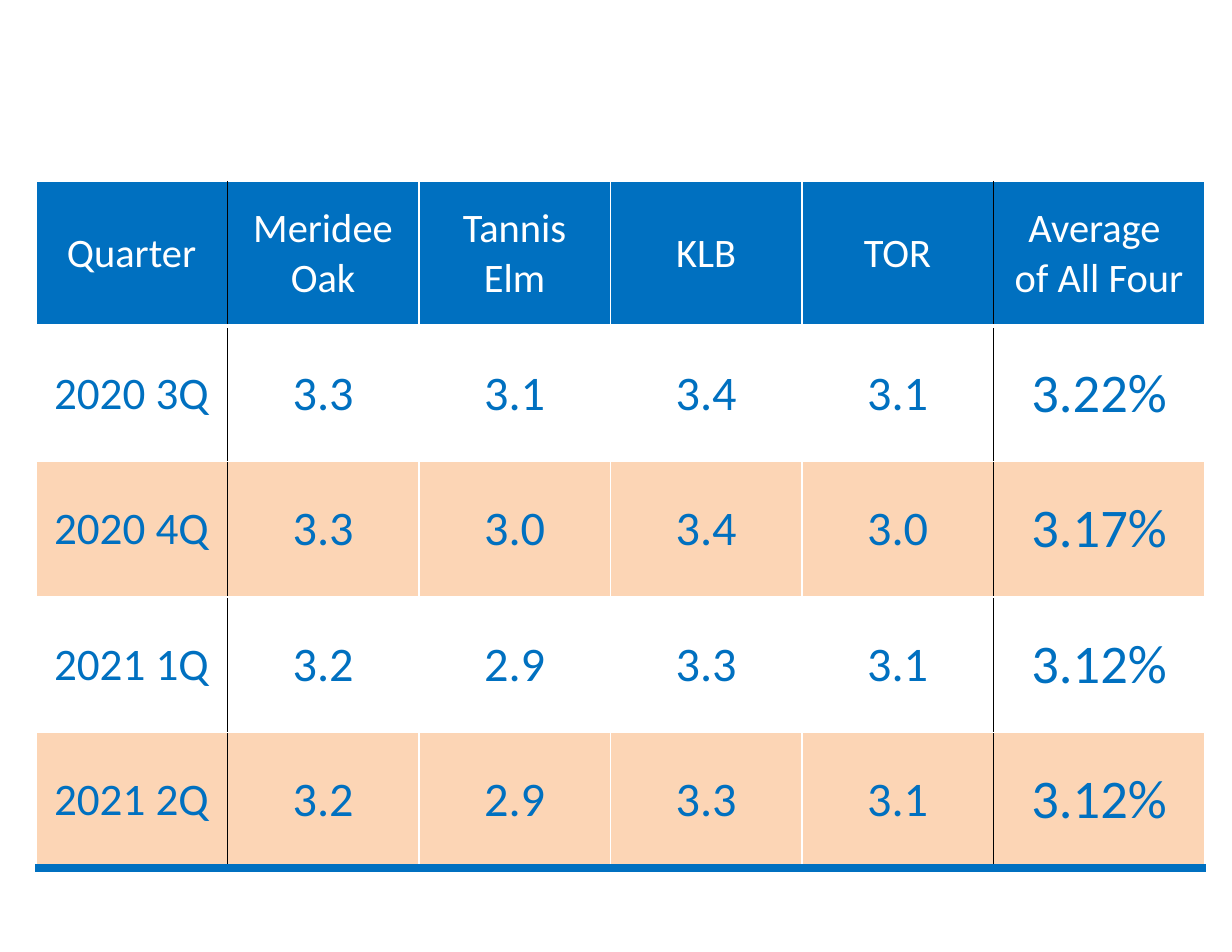
"""Build a slide with a table of quarterly rate forecasts."""
from lxml import etree
from pptx import Presentation
from pptx import util as u
from pptx.dml.color import RGBColor
from pptx.enum import text
from pptx.oxml import ns

BLUE = RGBColor(0x00, 0x70, 0xC0)
PEACH = RGBColor(0xFC, 0xD5, 0xB5)
WHITE = RGBColor(0xFF, 0xFF, 0xFF)
BLACK = RGBColor(0x00, 0x00, 0x00)

FONT = "Calibri"
HEADER_SIZE = 26
COLUMN_SIZES = [29, 31, 31, 31, 31, 35]
COLUMN_WIDTHS = [1.71] * 5 + [1.89]
ROW_HEIGHTS = [1.29] + [1.21] * 4
BLACK_EDGES = {1, 5}

FORECASTS = [
    ["Quarter", "Meridee Oak", "Tannis Elm", "KLB", "TOR", "Average \nof All Four"],
    ["2020 3Q", "3.3", "3.1", "3.4", "3.1", "3.22%"],
    ["2020 4Q", "3.3", "3.0", "3.4", "3.0", "3.17%"],
    ["2021 1Q", "3.2", "2.9", "3.3", "3.1", "3.12%"],
    ["2021 2Q", "3.2", "2.9", "3.3", "3.1", "3.12%"],
]


def set_borders(cell, borders):
    """Draw the (side, colour, points) borders of a cell."""
    properties = cell._tc.get_or_add_tcPr()
    for index, (side, color, points) in enumerate(borders):
        line = etree.Element(ns.qn(f"a:ln{side}"), w=str(u.Pt(points)))
        fill = etree.SubElement(line, ns.qn("a:solidFill"))
        etree.SubElement(fill, ns.qn("a:srgbClr"), val=str(color))
        properties.insert(index, line)


def cell_borders(row, column):
    """Work out a cell's borders from its place in the grid."""
    def vertical(edge):
        return BLACK if edge in BLACK_EDGES else WHITE

    last = row == len(FORECASTS) - 1
    return [
        ("L", vertical(column), 1),
        ("R", vertical(column + 1), 1),
        ("T", WHITE, 3 if row == 1 else 1),
        ("B", BLUE if last else WHITE, 6 if last else 3 if row == 0 else 1),
    ]


def write_cell(cell, words, size, color):
    """Write centred paragraphs, one for each line of words."""
    cell.vertical_anchor = text.MSO_ANCHOR.MIDDLE
    cell.margin_left = cell.margin_right = u.Inches(0.11)
    cell.margin_top = cell.margin_bottom = u.Inches(0.07)
    frame = cell.text_frame
    for index, line in enumerate(words.split("\n")):
        para = frame.add_paragraph() if index else frame.paragraphs[0]
        para.alignment = text.PP_ALIGN.CENTER
        run = para.add_run()
        run.text = line
        run.font.name = FONT
        run.font.size = u.Pt(size)
        run.font.color.rgb = color


def style_cell(cell, row, column):
    """Fill and frame a cell by its row and column."""
    cell.fill.solid()
    cell.fill.fore_color.rgb = BLUE if row == 0 else WHITE if row % 2 else PEACH
    set_borders(cell, cell_borders(row, column))


def add_forecast_table(page):
    """Add the forecast table to the page."""
    frame = page.shapes.add_table(
        len(ROW_HEIGHTS), len(COLUMN_WIDTHS), u.Inches(0.32), u.Inches(1.62),
        u.Inches(sum(COLUMN_WIDTHS)), u.Inches(sum(ROW_HEIGHTS)))
    table = frame.table
    for column, width in zip(table.columns, COLUMN_WIDTHS):
        column.width = u.Inches(width)
    for row, height in zip(table.rows, ROW_HEIGHTS):
        row.height = u.Inches(height)
    for row, entries in enumerate(FORECASTS):
        for column, words in enumerate(entries):
            cell = table.cell(row, column)
            size = COLUMN_SIZES[column] if row else HEADER_SIZE
            write_cell(cell, words, size, BLUE if row else WHITE)
            style_cell(cell, row, column)


def main():
    """Build the deck and save it."""
    deck = Presentation()
    deck.slide_width, deck.slide_height = u.Inches(11), u.Inches(8.5)
    page = deck.slides.add_slide(deck.slide_layouts[6])
    add_forecast_table(page)
    deck.save("out.pptx")


if __name__ == "__main__":
    main()
